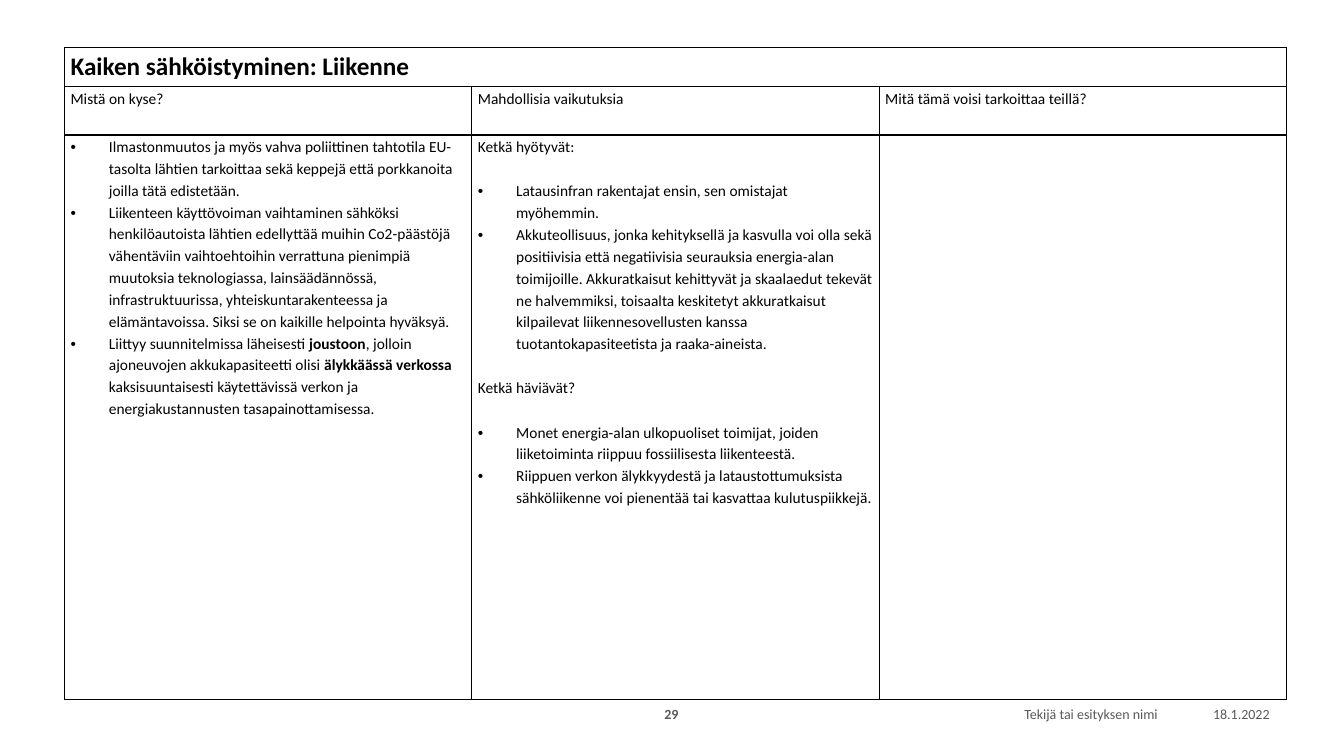
from lxml.etree import SubElement
from pptx import Presentation
from pptx.dml.color import RGBColor
from pptx.enum.text import MSO_ANCHOR, PP_ALIGN
from pptx.oxml import parse_xml
from pptx.oxml.ns import nsdecls, qn
from pptx.util import Inches, Pt

COLUMN_WIDTH = 4.04
ROW_HEIGHTS = [0.39, 0.48, 5.6]
TITLE = "Kaiken sähköistyminen: Liikenne"
HEADINGS = [
    "Mistä on kyse?",
    "Mahdollisia vaikutuksia",
    "Mitä tämä voisi tarkoittaa teillä?",
]
BACKGROUND = [
    "• Ilmastonmuutos ja myös vahva poliittinen tahtotila EU-tasolta lähtien tarkoittaa "
    "sekä keppejä että porkkanoita joilla tätä edistetään.",
    "• Liikenteen käyttövoiman vaihtaminen sähköksi henkilöautoista lähtien edellyttää "
    "muihin Co2-päästöjä vähentäviin vaihtoehtoihin verrattuna pienimpiä muutoksia "
    "teknologiassa, lainsäädännössä, infrastruktuurissa, yhteiskuntarakenteessa ja "
    "elämäntavoissa. Siksi se on kaikille helpointa hyväksyä.",
    "• Liittyy suunnitelmissa läheisesti **joustoon**, jolloin ajoneuvojen "
    "akkukapasiteetti olisi **älykkäässä verkossa** kaksisuuntaisesti käytettävissä "
    "verkon ja energiakustannusten tasapainottamisessa.",
]
IMPACTS = [
    "Ketkä hyötyvät:",
    "• Latausinfran rakentajat ensin, sen omistajat myöhemmin.",
    "• Akkuteollisuus, jonka kehityksellä ja kasvulla voi olla sekä positiivisia että "
    "negatiivisia seurauksia energia-alan toimijoille. Akkuratkaisut kehittyvät ja "
    "skaalaedut tekevät ne halvemmiksi, toisaalta keskitetyt akkuratkaisut kilpailevat "
    "liikennesovellusten kanssa tuotantokapasiteetista ja raaka-aineista.",
    "Ketkä häviävät?",
    "• Monet energia-alan ulkopuoliset toimijat, joiden liiketoiminta riippuu "
    "fossiilisesta liikenteestä.",
    "• Riippuen verkon älykkyydestä ja lataustottumuksista sähköliikenne voi pienentää "
    "tai kasvattaa kulutuspiikkejä.",
]


def color(value):
    return RGBColor.from_string(value)


class SlideBuilder:
    """Holds the text style and the page, and adds each kind of element."""

    font_name = "Calibri"
    ink = "000000"
    muted = "595959"

    def __init__(self, page):
        self.page = page

    def style(self, para, size, value, bold=False):
        para.font.name = self.font_name
        para.font.size = Pt(size)
        para.font.bold = bold
        para.font.color.rgb = color(value)

    def footer(self, text, left, width, align, bold=False):
        box = self.page.shapes.add_textbox(
            Inches(left), Inches(6.95), Inches(width), Inches(0.27))
        frame = box.text_frame
        frame.word_wrap = True
        frame.vertical_anchor = MSO_ANCHOR.MIDDLE
        para = frame.paragraphs[0]
        para.text = text
        para.alignment = align
        self.style(para, 10, self.muted, bold)

    def table(self, left, top, column_width, row_heights, columns):
        frame = self.page.shapes.add_table(
            len(row_heights), columns, Inches(left), Inches(top),
            Inches(column_width * columns), Inches(sum(row_heights)))
        grid = frame.table
        grid.first_row = grid.horz_banding = False
        for column in grid.columns:
            column.width = Inches(column_width)
        for row, height in zip(grid.rows, row_heights):
            row.height = Inches(height)
        for cell in grid.iter_cells():
            cell.margin_left = cell.margin_right = Inches(0.06)
            cell.margin_top = cell.margin_bottom = 0
            cell.fill.background()
            self.borders(cell)
        return grid

    def borders(self, cell):
        properties = cell._tc.get_or_add_tcPr()
        for position, side in enumerate(("lnL", "lnR", "lnT", "lnB")):
            properties.insert(position, parse_xml(
                f'<a:{side} {nsdecls("a")} w="12700"><a:solidFill>'
                f'<a:srgbClr val="{self.ink}"/></a:solidFill></a:{side}>'))

    def bullet(self, para):
        properties = para._p.get_or_add_pPr()
        properties.set("marL", str(Inches(0.38)))
        properties.set("indent", str(-Inches(0.38)))
        SubElement(properties, qn("a:buFont"), typeface="Arial")
        SubElement(properties, qn("a:buChar"), char="•")

    def fill_cell(self, cell, lines, size=11, bold=False):
        frame = cell.text_frame
        was_bullet = False
        for index, line in enumerate(lines):
            para = frame.add_paragraph() if index else frame.paragraphs[0]
            is_bullet = line.startswith("• ")
            if is_bullet:
                self.bullet(para)
            para.line_spacing = 1.15
            if index and is_bullet != was_bullet:
                para.space_before = Pt(16)
            self.style(para, size, self.ink, bold)
            for part, text in enumerate(line.removeprefix("• ").split("**")):
                span = para.add_run()
                span.text = text
                if part % 2:
                    span.font.bold = True
            was_bullet = is_bullet


def main():
    deck = Presentation()
    deck.slide_width, deck.slide_height = Inches(13.33), Inches(7.5)
    builder = SlideBuilder(deck.slides.add_slide(deck.slide_layouts[6]))

    builder.footer("18.1.2022", 11.58, 1.11, PP_ALIGN.RIGHT)
    builder.footer("Tekijä tai esityksen nimi", 7.41, 4.17, PP_ALIGN.RIGHT)
    builder.footer("29", 6.36, 0.6, PP_ALIGN.CENTER, bold=True)

    grid = builder.table(0.64, 0.47, COLUMN_WIDTH, ROW_HEIGHTS, len(HEADINGS))
    grid.cell(0, 0).merge(grid.cell(0, len(HEADINGS) - 1))
    builder.fill_cell(grid.cell(0, 0), [TITLE], size=18, bold=True)
    for column, heading in enumerate(HEADINGS):
        builder.fill_cell(grid.cell(1, column), [heading])
    for column, lines in enumerate((BACKGROUND, IMPACTS)):
        builder.fill_cell(grid.cell(2, column), lines)

    deck.save("out.pptx")


if __name__ == "__main__":
    main()
